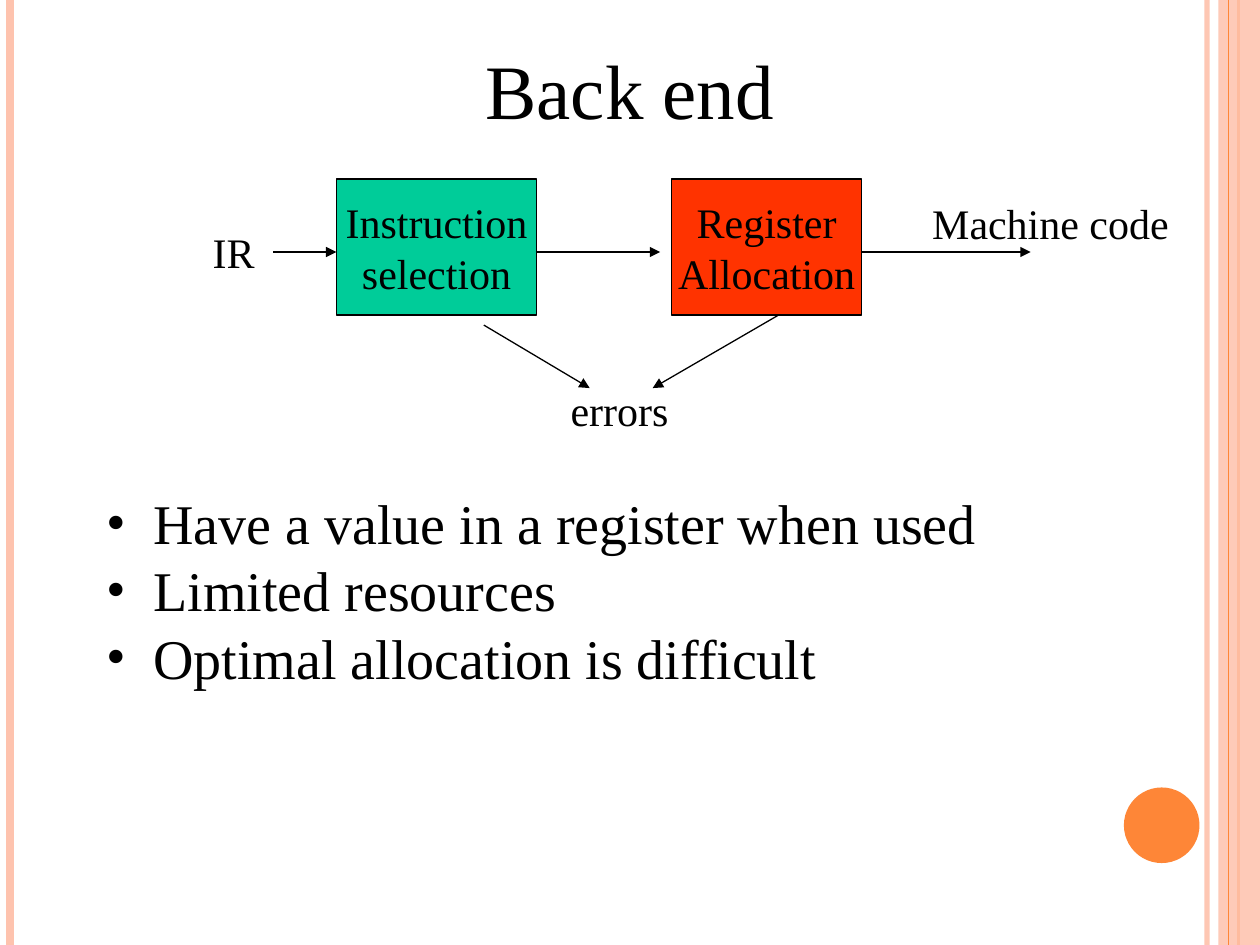
from lxml.etree import SubElement
from pptx import Presentation
from pptx.dml.color import RGBColor
from pptx.enum.shapes import MSO_CONNECTOR, MSO_SHAPE
from pptx.enum.text import MSO_ANCHOR, PP_ALIGN
from pptx.oxml.ns import qn
from pptx.util import Inches, Pt

COLORS = {
    "text": "000000",
    "pink": "FEC3AE",
    "orange": "FE8637",
    "selection": "00CC99",
    "allocation": "FF3300",
}
FONT = "Times New Roman"
SLIDE_HEIGHT = 7.5
FLOW_Y = 2


def color(name):
    return RGBColor.from_string(COLORS[name])


def set_values(target, values):
    for name, value in values.items():
        setattr(target, name, value)


def set_alpha(fill_format_element, percent):
    for color_element in fill_format_element.iter(qn("a:srgbClr")):
        SubElement(color_element, qn("a:alpha"), val=str(percent * 1000))


def add_line(page, start, end, color_name="text", width=0.75, alpha=100, arrow=False):
    line = page.shapes.add_connector(
        MSO_CONNECTOR.STRAIGHT, *[Inches(value) for value in (*start, *end)]
    )
    line.line.color.rgb = color(color_name)
    line.line.width = Pt(width)
    properties = line.line._get_or_add_ln()
    if alpha < 100:
        set_alpha(properties, alpha)
    if arrow:
        SubElement(properties, qn("a:tailEnd"), type="triangle")
    SubElement(line._element.spPr, qn("a:effectLst"))


def add_block(page, kind, place, fill, outlined=False, alpha=100):
    block = page.shapes.add_shape(kind, *[Inches(value) for value in place])
    block.shadow.inherit = False
    block.fill.solid()
    block.fill.fore_color.rgb = color(fill)
    if alpha < 100:
        set_alpha(block._element.spPr, alpha)
    if outlined:
        block.line.color.rgb = color("text")
        block.line.width = Pt(0.75)
    else:
        block.line.fill.background()
    return block


def write_text(box, lines, size, wrap=False, align=PP_ALIGN.LEFT, anchor=MSO_ANCHOR.TOP):
    frame = box.text_frame
    set_values(frame, {"word_wrap": wrap, "vertical_anchor": anchor})
    for index, line in enumerate(lines):
        para = frame.paragraphs[0] if index == 0 else frame.add_paragraph()
        para.alignment = align
        span = para.add_run()
        set_values(span, {"text": line})
        set_values(span.font, {"name": FONT, "size": Pt(size)})
        span.font.color.rgb = color("text")


def add_text(page, place, lines, size, **layout):
    box = page.shapes.add_textbox(*[Inches(value) for value in place])
    write_text(box, lines, size, **layout)
    return box


def add_bullets(box):
    for para in box.text_frame.paragraphs:
        properties = para._p.get_or_add_pPr()
        properties.set("marL", str(Inches(0.37)))
        properties.set("indent", str(-Inches(0.37)))
        bullet_color = SubElement(properties, qn("a:buClr"))
        SubElement(bullet_color, qn("a:srgbClr"), val=COLORS["text"])
        SubElement(properties, qn("a:buFont"), typeface=FONT)
        SubElement(properties, qn("a:buChar"), char="•")


def add_stripe(page, x, color_name, width, alpha=100):
    add_line(page, (x, 0), (x, SLIDE_HEIGHT), color_name, width, alpha)


def add_decoration(page):
    add_stripe(page, 9.58, "pink", 3, alpha=93)
    add_stripe(page, 0.08, "pink", 4.5)
    add_stripe(page, 9.83, "orange", 1.5)
    add_block(page, MSO_SHAPE.RECTANGLE, (9.67, 0, 0.33, SLIDE_HEIGHT), "pink", alpha=87)
    add_stripe(page, 9.75, "orange", 0.75)
    add_block(page, MSO_SHAPE.OVAL, (8.92, 6.25, 0.6, 0.6), "orange")


def add_flow(page):
    stages = [
        (2.67, 1.59, "selection", ["Instruction", "selection"]),
        (5.33, 1.51, "allocation", ["Register", "Allocation"]),
    ]
    for left, width, fill, lines in stages:
        stage = add_block(
            page, MSO_SHAPE.RECTANGLE, (left, 1.42, width, 1.08), fill, outlined=True
        )
        write_text(stage, lines, 24, align=PP_ALIGN.CENTER, anchor=MSO_ANCHOR.MIDDLE)

    labels = [
        ("IR", 1.59, 1.75, 0.53),
        ("Machine code", 7.3, 1.52, 2.08),
        ("errors", 4.43, 3, 0.98),
    ]
    for label, left, top, width in labels:
        add_text(page, (left, top, width, 0.5), [label], 24)

    for start, end in [(2.17, 2.67), (4.25, 5.24), (6.84, 8.18)]:
        add_line(page, (start, FLOW_Y), (end, FLOW_Y), arrow=True)
    add_line(page, (3.84, 2.58), (4.68, 3.08), arrow=True)
    add_line(page, (6.18, 2.5), (5.18, 3.08), arrow=True)


def main():
    deck = Presentation()
    set_values(deck, {"slide_width": Inches(10), "slide_height": Inches(SLIDE_HEIGHT)})
    page = deck.slides.add_slide(deck.slide_layouts[6])
    add_decoration(page)
    add_text(
        page, (0.75, 0.08, 8.5, 1.25), ["Back end"], 44,
        wrap=True, align=PP_ALIGN.CENTER, anchor=MSO_ANCHOR.MIDDLE,
    )
    points = [
        "Have a value in a register when used",
        "Limited resources",
        "Optimal allocation is difficult",
    ]
    add_bullets(add_text(page, (0.75, 3.83, 8.5, 2.83), points, 32, wrap=True))
    add_flow(page)
    deck.save("out.pptx")


if __name__ == "__main__":
    main()
